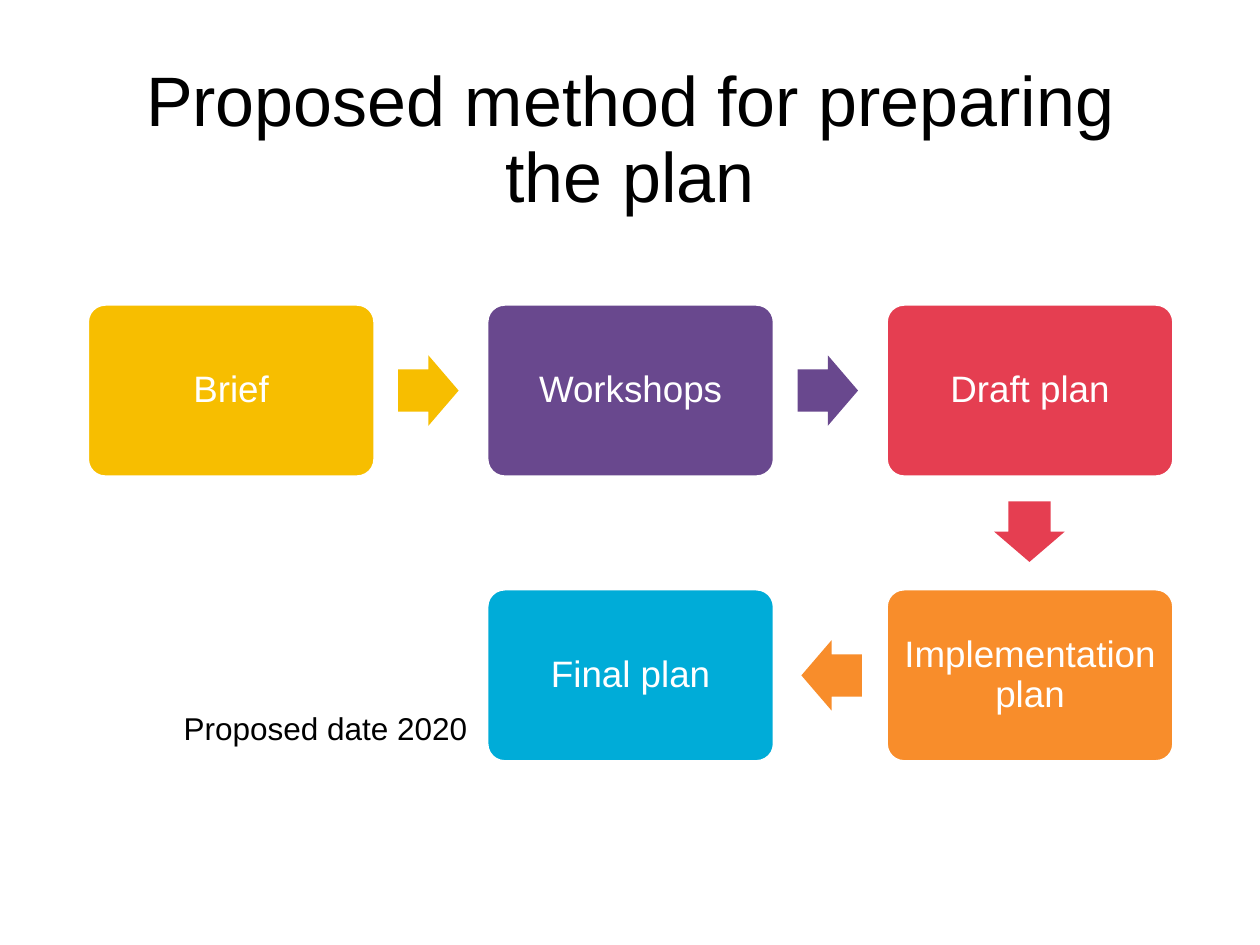
from pptx import Presentation
from pptx.dml.color import RGBColor
from pptx.enum.shapes import MSO_SHAPE
from pptx.enum.text import MSO_ANCHOR, PP_ALIGN
from pptx.util import Inches, Pt

ROUNDED = MSO_SHAPE.ROUNDED_RECTANGLE
ARROW = MSO_SHAPE.RIGHT_ARROW
MIDDLE = MSO_ANCHOR.MIDDLE
CENTER = PP_ALIGN.CENTER
TITLE_ONLY = 5

FONT = "Arial"
COLORS = {
    "text": "000000",
    "white": "FFFFFF",
    "yellow": "F7BE00",
    "purple": "69488E",
    "red": "E53E51",
    "orange": "F88D2B",
    "blue": "00ACD8",
}

# Grid of steps, in inches
LEFT, TOP = 0.7, 2.42
STEP_W, STEP_H = 2.27, 1.36
COLUMN_PITCH, ROW_PITCH = 3.17, 2.26
ARROW_W, ARROW_H = 0.48, 0.56

# Label, colour, column, row
STEPS = [
    ("Brief", "yellow", 0, 0),
    ("Workshops", "purple", 1, 0),
    ("Draft plan", "red", 2, 0),
    ("Implementation plan", "orange", 2, 1),
    ("Final plan", "blue", 1, 1),
]
# Colour, centre x, centre y, rotation
ARROWS = [
    ("yellow", 3.4, 3.1, 0),
    ("purple", 6.57, 3.1, 0),
    ("red", 8.17, 4.22, 90),
    ("orange", 6.6, 5.36, 180),
]


def rgb(name):
    return RGBColor.from_string(COLORS[name])


def format_text(paragraph, size, color):
    paragraph.font.name = FONT
    paragraph.font.size = Pt(size)
    paragraph.font.color.rgb = rgb(color)


def set_title(slide, text):
    title = slide.shapes.title
    title.left, title.top = Inches(0.69), Inches(0.4)
    title.width, title.height = Inches(8.62), Inches(1.45)
    title.text_frame.text = text
    title.text_frame.vertical_anchor = MIDDLE
    para = title.text_frame.paragraphs[0]
    para.alignment = CENTER
    para.line_spacing = 0.9
    format_text(para, 40, "text")


def add_filled_shape(slide, kind, left, top, width, height, color):
    shape = slide.shapes.add_shape(
        kind, Inches(left), Inches(top), Inches(width), Inches(height))
    shape.shadow.inherit = False
    shape.fill.solid()
    shape.fill.fore_color.rgb = rgb(color)
    return shape


def add_step(slide, label, color, column, row):
    step = add_filled_shape(
        slide, ROUNDED, LEFT + column * COLUMN_PITCH, TOP + row * ROW_PITCH,
        STEP_W, STEP_H, color)
    step.adjustments[0] = 0.1
    step.line.color.rgb = rgb("white")
    step.line.width = Pt(1)
    frame = step.text_frame
    frame.word_wrap = True
    frame.vertical_anchor = MIDDLE
    frame.margin_left = frame.margin_right = Inches(0.08)
    frame.text = label
    para = frame.paragraphs[0]
    para.alignment = CENTER
    para.line_spacing = 0.9
    format_text(para, 21, "white")


def add_arrow(slide, color, center_x, center_y, rotation):
    arrow = add_filled_shape(
        slide, ARROW, center_x - ARROW_W / 2, center_y - ARROW_H / 2,
        ARROW_W, ARROW_H, color)
    arrow.adjustments[0] = 0.6
    arrow.adjustments[1] = 0.5
    arrow.line.fill.background()
    arrow.rotation = rotation


def add_note(slide, text):
    box = slide.shapes.add_textbox(
        Inches(1.36), Inches(5.58), Inches(2.53), Inches(0.4))
    box.text_frame.word_wrap = True
    box.text_frame.text = text
    format_text(box.text_frame.paragraphs[0], 18, "text")


def main():
    deck = Presentation()
    deck.slide_width, deck.slide_height = Inches(10), Inches(7.5)
    slide = deck.slides.add_slide(deck.slide_layouts[TITLE_ONLY])

    set_title(slide, "Proposed method for preparing the plan")

    # Process flow
    for step in STEPS:
        add_step(slide, *step)
    for arrow in ARROWS:
        add_arrow(slide, *arrow)

    # Date beside the last step
    add_note(slide, "Proposed date 2020")

    deck.save("out.pptx")


if __name__ == "__main__":
    main()
